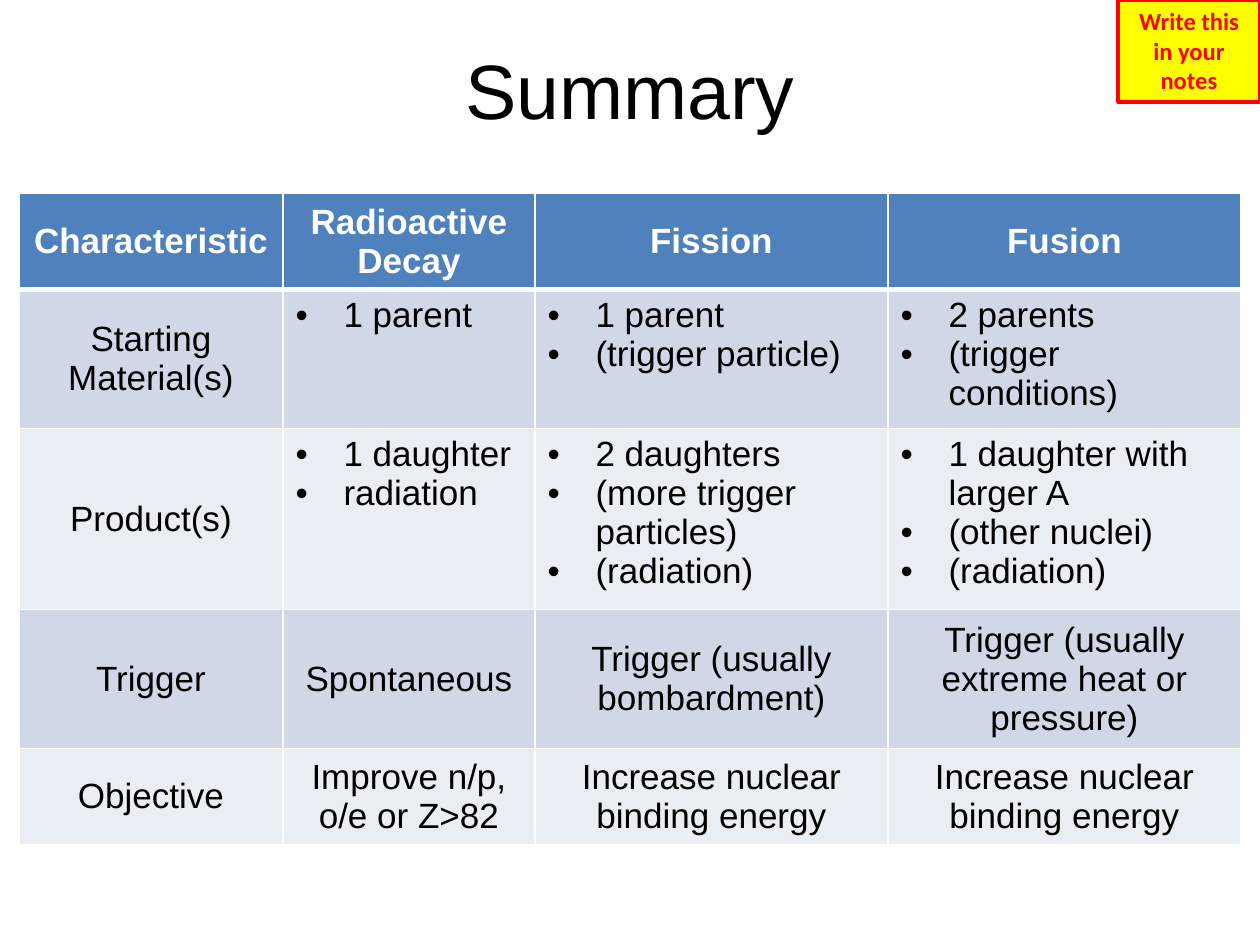
"""Build the summary slide comparing radioactive decay, fission and fusion."""
import lxml.etree
import pptx
import pptx.dml.color
import pptx.enum.shapes
import pptx.enum.text
import pptx.oxml.ns
import pptx.util

PX = 914400 / 126
RGB = pptx.dml.color.RGBColor.from_string
MIDDLE = pptx.enum.text.MSO_ANCHOR.MIDDLE
TOP = pptx.enum.text.MSO_ANCHOR.TOP
CENTER = pptx.enum.text.PP_ALIGN.CENTER
LEFT = pptx.enum.text.PP_ALIGN.LEFT
THEME = {
    "title": {"name": "Arial", "size": pptx.util.Pt(44), "bold": False, "color": "000000"},
    "note": {"name": "Calibri", "size": pptx.util.Pt(14), "bold": True, "color": "FF0000"},
    "header": {"name": "Arial", "size": pptx.util.Pt(20), "bold": True, "color": "FFFFFF"},
    "body": {"name": "Arial", "size": pptx.util.Pt(20), "bold": False, "color": "000000"},
    "header_fill": "4F81BD",
    "bands": ["D0D8E8", "E9EDF4"],
    "rule": "FFFFFF",
    "note_fill": "FFFF00",
}


def px(*lengths):
    return [round(length * PX) for length in lengths]


def write(frame, lines, style, align=CENTER):
    frame.word_wrap = True
    for index, line in enumerate(lines):
        paragraph = frame.paragraphs[0] if index == 0 else frame.add_paragraph()
        paragraph.alignment = align
        run = paragraph.add_run()
        run.text = line
        for key, value in THEME[style].items():
            if key == "color":
                run.font.color.rgb = RGB(value)
            else:
                setattr(run.font, key, value)


deck = pptx.Presentation()
deck.slide_width, deck.slide_height = px(1260, 945)
slide = deck.slides.add_slide(deck.slide_layouts[6])

title = slide.shapes.add_textbox(*px(25, 38, 1210, 101))
title.text_frame.vertical_anchor = MIDDLE
write(title.text_frame, ["Summary"], "title")

note = slide.shapes.add_shape(pptx.enum.shapes.MSO_SHAPE.RECTANGLE, *px(1118, 0, 142, 102))
note.shadow.inherit = False
note.fill.solid()
note.fill.fore_color.rgb = RGB(THEME["note_fill"])
note.line.color.rgb = RGB("FF0000")
note.line.width = pptx.util.Pt(2.25)
note.text_frame.vertical_anchor = TOP
write(note.text_frame, ["Write this in your notes"], "note")

summary = [
    ["Characteristic", "Radioactive Decay", "Fission", "Fusion"],
    ["Starting Material(s)", ["1 parent"], ["1 parent", "(trigger particle)"],
     ["2 parents", "(trigger conditions)"]],
    ["Product(s)", ["1 daughter", "radiation"],
     ["2 daughters", "(more trigger particles)", "(radiation)"],
     ["1 daughter with larger A", "(other nuclei)", "(radiation)"]],
    ["Trigger", "Spontaneous", "Trigger (usually bombardment)",
     "Trigger (usually extreme heat or pressure)"],
    ["Objective", "Improve n/p, o/e or Z>82", "Increase nuclear binding energy",
     "Increase nuclear binding energy"],
]
column_widths = px(264, 252, 353, 353)
row_heights = px(96, 139, 180, 139, 96)
comparison = slide.shapes.add_table(
    len(summary), len(summary[0]), *px(19, 193),
    sum(column_widths), sum(row_heights)).table
for column, width in zip(comparison.columns, column_widths):
    column.width = width
for row, height in zip(comparison.rows, row_heights):
    row.height = height

bullet_indent, = px(48)
for r, entries in enumerate(summary):
    for c, entry in enumerate(entries):
        cell = comparison.cell(r, c)
        bulleted = isinstance(entry, list)
        cell.vertical_anchor = TOP if bulleted else MIDDLE
        write(cell.text_frame, entry if bulleted else [entry],
              "body" if r else "header", LEFT if bulleted else CENTER)
        if bulleted:
            for paragraph in cell.text_frame.paragraphs:
                properties = paragraph._p.get_or_add_pPr()
                properties.set("marL", str(bullet_indent))
                properties.set("indent", str(-bullet_indent))
                for tag, key, value in [("a:buFont", "typeface", "Arial"), ("a:buChar", "char", "•")]:
                    lxml.etree.SubElement(properties, pptx.oxml.ns.qn(tag)).set(key, value)
        edges = {"L": 1, "R": 1, "T": 3 if r == 1 else 1, "B": 1 if r else 3}
        for side, weight in edges.items():
            border = lxml.etree.SubElement(cell._tc.get_or_add_tcPr(), pptx.oxml.ns.qn(f"a:ln{side}"))
            border.set("w", str(pptx.util.Pt(weight)))
            fill = lxml.etree.SubElement(border, pptx.oxml.ns.qn("a:solidFill"))
            lxml.etree.SubElement(fill, pptx.oxml.ns.qn("a:srgbClr")).set("val", THEME["rule"])
        cell.fill.solid()
        cell.fill.fore_color.rgb = RGB(THEME["bands"][(r - 1) % 2] if r else THEME["header_fill"])

deck.save("out.pptx")
